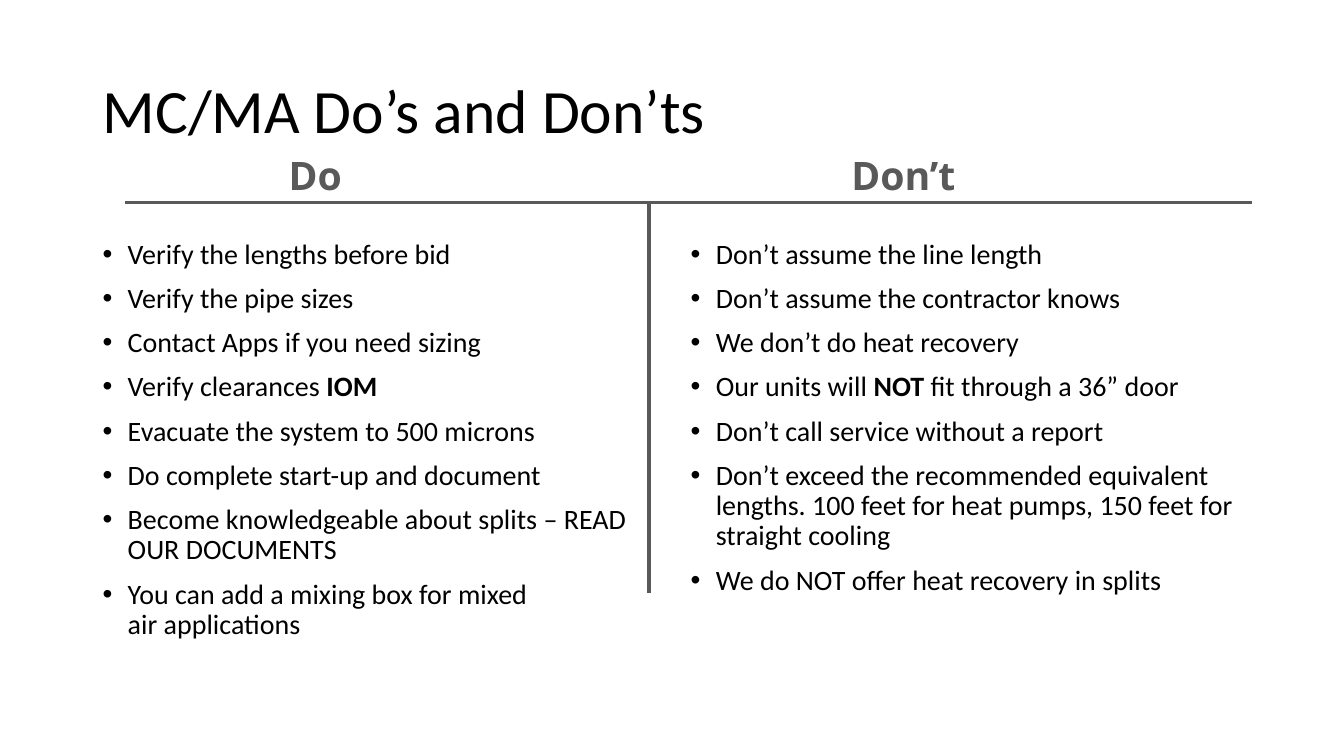
from dataclasses import dataclass

from lxml.etree import SubElement
from pptx import Presentation
from pptx.dml.color import RGBColor
from pptx.enum.shapes import MSO_CONNECTOR
from pptx.enum.text import MSO_ANCHOR, MSO_AUTO_SIZE, PP_ALIGN
from pptx.oxml.ns import qn
from pptx.util import Cm, Pt

BLACK = "000000"
GREY = "595959"
BODY_FONT = "Calibri"
HEADING_FONT = "Open Sans"
LEFT_EDGE, RIGHT_EDGE = 2.33, 31.55
RULE_TOP = 5.11
INDENT = Cm(0.635)


@dataclass
class Column:
    heading: str
    left: float
    # Each item is a list of runs; "**" in front marks a bold run, "\n" a line break
    items: list[list[str]]


@dataclass
class Rule:
    start: tuple[float, float]
    end: tuple[float, float]
    width: float


COLUMNS = [
    Column("Do", LEFT_EDGE, [
        ["Verify the lengths before bid"],
        ["Verify the pipe sizes"],
        ["Contact Apps if you need sizing"],
        ["Verify clearances ", "**IOM"],
        ["Evacuate the system to 500 microns"],
        ["Do complete start-up and document"],
        ["Become knowledgeable about splits – READ OUR DOCUMENTS"],
        ["You can add a mixing box for mixed ", "\n", "air applications"],
    ]),
    Column("Don’t", 17.15, [
        ["Don’t assume the line length"],
        ["Don’t assume the contractor knows"],
        ["We don’t do heat recovery"],
        ["Our units will ", "**NOT", " fit through a 36” door"],
        ["Don’t call service without a report"],
        ["Don’t exceed the recommended equivalent lengths. "
         "100 feet for heat pumps, 150 feet for straight cooling"],
        ["We do NOT offer heat recovery in splits"],
    ]),
]

RULES = [
    Rule((3.15, RULE_TOP), (RIGHT_EDGE, RULE_TOP), 2.25),
    Rule((16.36, RULE_TOP), (16.36, 14.94), 3),
]


def color(hex_string: str) -> RGBColor:
    return RGBColor.from_string(hex_string)


def place(shape, left: float, top: float, width: float, height: float) -> None:
    shape.left, shape.top = Cm(left), Cm(top)
    shape.width, shape.height = Cm(width), Cm(height)


def add_run(paragraph, text: str, size: float, font_name: str = BODY_FONT,
            hex_color: str = BLACK, bold: bool = False) -> None:
    run = paragraph.add_run()
    run.text = text
    run.font.size = Pt(size)
    run.font.name = font_name
    run.font.bold = bold
    run.font.color.rgb = color(hex_color)


def add_bullet(paragraph) -> None:
    properties = paragraph._p.get_or_add_pPr()
    properties.set("marL", str(INDENT))
    properties.set("indent", str(-INDENT))
    SubElement(properties, qn("a:buFont")).set("typeface", "Arial")
    SubElement(properties, qn("a:buChar")).set("char", "•")


def fill_title(title) -> None:
    place(title, LEFT_EDGE, 1.01, 29.21, 3.68)
    frame = title.text_frame
    frame.auto_size = MSO_AUTO_SIZE.NONE
    frame.vertical_anchor = MSO_ANCHOR.MIDDLE
    paragraph = frame.paragraphs[0]
    paragraph.alignment = PP_ALIGN.LEFT
    paragraph.line_spacing = 0.9
    add_run(paragraph, "MC/MA Do’s and Don’ts", 44)


def fill_list(body, column: Column) -> None:
    place(body, column.left, 5.92, 14.4, 11.46)
    frame = body.text_frame
    frame.auto_size = MSO_AUTO_SIZE.NONE
    for index, item in enumerate(column.items):
        paragraph = frame.add_paragraph() if index else frame.paragraphs[0]
        add_bullet(paragraph)
        paragraph.line_spacing = 0.9
        paragraph.space_before = Pt(10 if index else 0)
        for text in item:
            if text == "\n":
                paragraph.add_line_break()
            else:
                add_run(paragraph, text.removeprefix("**"), 20,
                        bold=text.startswith("**"))


def add_heading(slide, column: Column) -> None:
    box = slide.shapes.add_textbox(Cm(column.left), Cm(3.68), Cm(11.23), Cm(1.45))
    box.text_frame.word_wrap = True
    paragraph = box.text_frame.paragraphs[0]
    paragraph.alignment = PP_ALIGN.CENTER
    add_run(paragraph, column.heading, 28, HEADING_FONT, GREY, bold=True)


def add_rule(slide, rule: Rule) -> None:
    connector = slide.shapes.add_connector(
        MSO_CONNECTOR.STRAIGHT, *map(Cm, rule.start + rule.end))
    connector.line.color.rgb = color(GREY)
    connector.line.width = Pt(rule.width)
    SubElement(connector._element.spPr, qn("a:effectLst"))


def main() -> None:
    presentation = Presentation()
    presentation.slide_width, presentation.slide_height = Cm(33.87), Cm(19.05)
    two_content_layout = presentation.slide_layouts[3]
    slide = presentation.slides.add_slide(two_content_layout)

    # Title
    fill_title(slide.shapes.title)

    # Lists with their headings
    for index, column in enumerate(COLUMNS, start=1):
        fill_list(slide.placeholders[index], column)
        add_heading(slide, column)

    # T-shaped divider
    for rule in RULES:
        add_rule(slide, rule)

    presentation.save("out.pptx")


if __name__ == "__main__":
    main()
